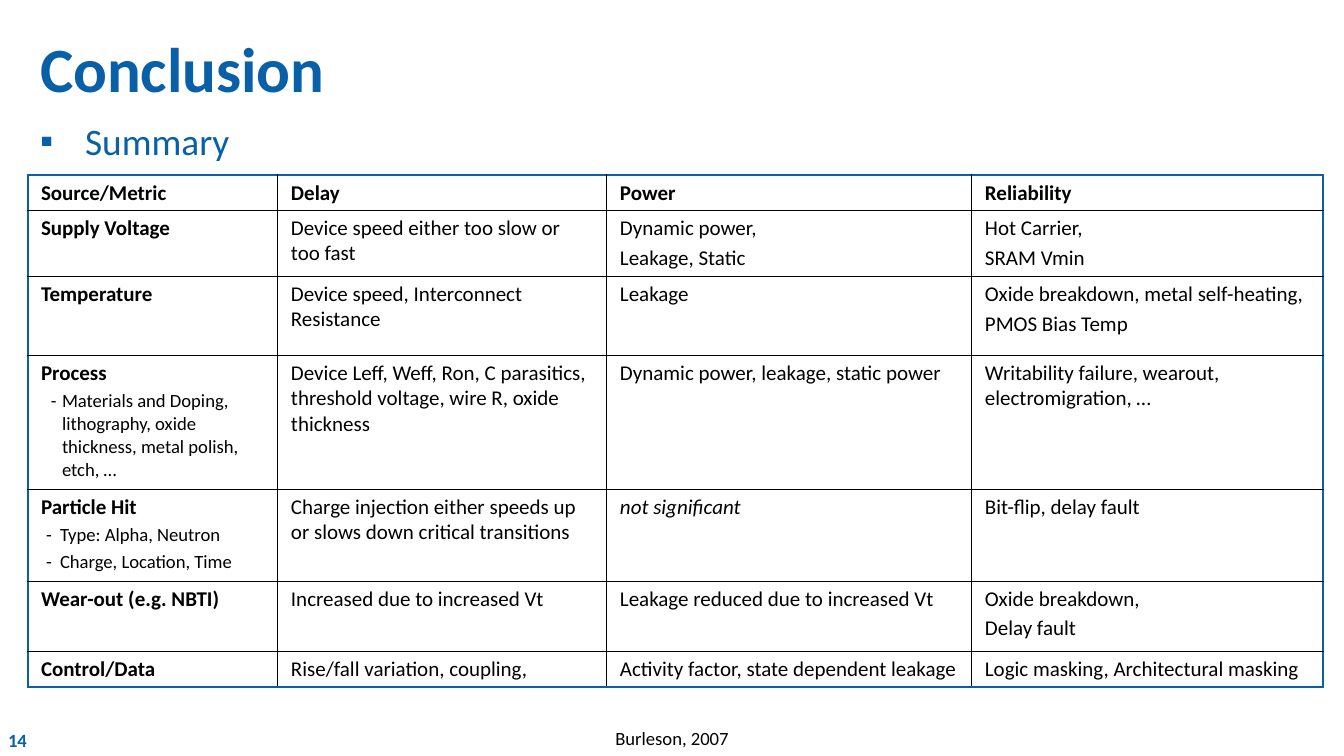
from lxml.etree import SubElement
from pptx import Presentation
from pptx.dml.color import RGBColor
from pptx.enum.text import MSO_ANCHOR, PP_ALIGN
from pptx.oxml.ns import qn
from pptx.util import Emu, Pt

BLUE = RGBColor(0x08, 0x60, 0xA8)
BLACK = RGBColor(0, 0, 0)

COLS = [250, 329, 365, 351]
ROWS = [35, 66, 79, 134, 92, 70, 36]
CELLS = [
    ["Source/Metric", "Delay", "Power", "Reliability"],
    ["Supply Voltage", "Device speed either too slow or too fast",
     "Dynamic power,\nLeakage, Static", "Hot Carrier,\nSRAM Vmin"],
    ["Temperature", "Device speed, Interconnect Resistance", "Leakage",
     "Oxide breakdown, metal self-heating,\nPMOS Bias Temp"],
    ["Process\n-\tMaterials and Doping, lithography, oxide thickness, metal polish, etch, …",
     "Device Leff, Weff, Ron, C parasitics, threshold voltage, wire R, oxide thickness",
     "Dynamic power, leakage, static power",
     "Writability failure, wearout, electromigration, …"],
    ["Particle Hit\n-\tType: Alpha, Neutron\n-\tCharge, Location, Time",
     "Charge injection either speeds up or slows down critical transitions",
     "not significant", "Bit-flip, delay fault"],
    ["Wear-out (e.g. NBTI)", "Increased due to increased Vt",
     "Leakage reduced due to increased Vt", "Oxide breakdown,\nDelay fault"],
    ["Control/Data", "Rise/fall variation, coupling,",
     "Activity factor, state dependent leakage",
     "Logic masking, Architectural masking"],
]
HANGS = {3: (21, -11), 4: (19, -14)}


def px(n):
    return Emu(round(n * 914400 / 84))


class Deck:
    """Draws styled elements on one slide."""

    def __init__(self, font):
        self.font = font
        self.prs = Presentation()
        self.prs.slide_width, self.prs.slide_height = px(1344), px(756)
        self.slide = self.prs.slides.add_slide(self.prs.slide_layouts[5])

    def style(self, para, size, color=BLACK, bold=False, italic=False):
        for run in para.runs:
            font = run.font
            font.name, font.size = self.font, Pt(size)
            font.bold, font.italic = bold, italic
            font.color.rgb = color

    def indent(self, para, left, first):
        props = para._p.get_or_add_pPr()
        props.set("marL", str(px(left)))
        props.set("indent", str(px(first)))
        return props

    def fill(self, shape, box, text, size, color, bold=False,
             align=PP_ALIGN.LEFT, inset=(12, 6)):
        shape.left, shape.top, shape.width, shape.height = map(px, box)
        frame = shape.text_frame
        frame.text = text
        frame.word_wrap = True
        frame.margin_left = frame.margin_right = px(inset[0])
        frame.margin_top = frame.margin_bottom = px(inset[1])
        para = frame.paragraphs[0]
        para.alignment = align
        self.style(para, size, color, bold)
        return frame

    def title(self, box, text):
        frame = self.fill(self.slide.shapes.title, box, text, 54, BLUE, True)
        frame.vertical_anchor = MSO_ANCHOR.MIDDLE

    def text(self, box, text, size, color, **look):
        shape = self.slide.shapes.add_textbox(0, 0, 0, 0)
        return self.fill(shape, box, text, size, color, **look)

    def bullet(self, box, text):
        para = self.text(box, text, 32, BLUE).paragraphs[0]
        props = self.indent(para, 45, -45)
        SubElement(props, qn("a:buFont"), typeface="Arial")
        SubElement(props, qn("a:buChar"), char="▪")

    def edge(self, cell, tag, outer):
        line = SubElement(cell._tc.get_or_add_tcPr(), qn("a:" + tag),
                          w=str(Pt(2.25 if outer else 1)))
        solid = SubElement(line, qn("a:solidFill"))
        SubElement(solid, qn("a:srgbClr"), val=str(BLUE if outer else BLACK))

    def cell(self, cell, text, head, hang):
        cell.text_frame.text = text
        cell.margin_left = cell.margin_right = px(13)
        cell.margin_top = cell.margin_bottom = px(5)
        for i, para in enumerate(cell.text_frame.paragraphs):
            item = para.text.startswith("-")
            self.style(para, 16 if item else 18, bold=head and not item,
                       italic=text == "not significant")
            if i:
                para.space_before = Pt(3.6)
            if item:
                self.indent(para, *hang)

    def table(self, left, top, cols, rows, cells):
        table = self.slide.shapes.add_table(
            len(rows), len(cols), px(left), px(top),
            px(sum(cols)), px(sum(rows))).table
        table.first_row = table.horz_banding = False
        for col, width in zip(table.columns, cols):
            col.width = px(width)
        for r, height in enumerate(rows):
            table.rows[r].height = px(height)
            for c, text in enumerate(cells[r]):
                cell = table.cell(r, c)
                self.cell(cell, text, r == 0 or c == 0, HANGS.get(r))
                self.edge(cell, "lnL", c == 0)
                self.edge(cell, "lnR", c == len(cols) - 1)
                self.edge(cell, "lnT", r == 0)
                self.edge(cell, "lnB", r == len(rows) - 1)
                cell.fill.background()


def main():
    deck = Deck("Calibri")
    deck.text((0, 725, 63, 31), "14", 16, BLUE, bold=True, inset=(8, 4))
    deck.title((28, 18, 1288, 98), "Conclusion")
    deck.bullet((28, 112, 1288, 602), "Summary")
    deck.table(28, 175, COLS, ROWS, CELLS)
    deck.text((28, 721, 1288, 35), "Burleson, 2007", 16, BLACK,
              align=PP_ALIGN.CENTER)
    deck.prs.save("out.pptx")


if __name__ == "__main__":
    main()
